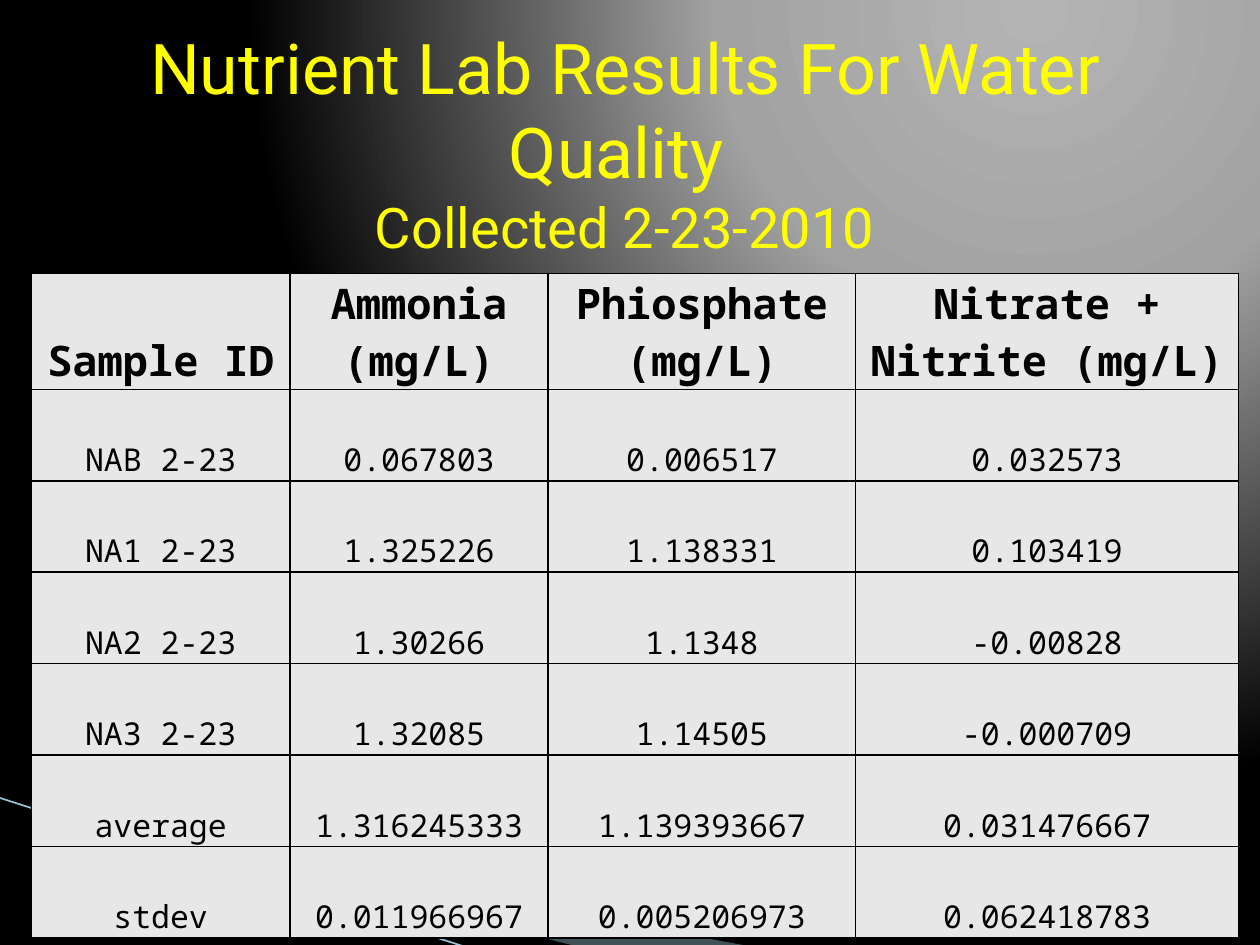
from dataclasses import dataclass

from lxml.etree import SubElement
from pptx import Presentation
from pptx.dml.color import RGBColor
from pptx.enum.shapes import MSO_CONNECTOR as Connector
from pptx.enum.text import MSO_ANCHOR as Anchor, MSO_AUTO_SIZE as AutoSize, PP_ALIGN as Align
from pptx.oxml import parse_xml
from pptx.oxml.ns import nsdecls, qn
from pptx.util import Emu, Inches, Pt

WIDTH, HEIGHT = Inches(10), Inches(7.5)
TITLE_FONT, TABLE_FONT = "Roboto", "Noto Sans Mono"
YELLOW, BLACK, CELL_GREY = "FFFF00", "000000", "E7E7E7"
GRADIENT_STOPS = [(0, "B4B4B4"), (40, "A2A2A2"), (100, BLACK)]
COLUMN_WIDTHS = [20.5, 20.5, 24.4, 30.4]
TABLE_HEIGHT = 67.73
ROWS = [
    ["Sample ID", "Ammonia (mg/L)", "Phiosphate (mg/L)", "Nitrate + Nitrite (mg/L)"],
    ["NAB 2-23", "0.067803", "0.006517", "0.032573"],
    ["NA1 2-23", "1.325226", "1.138331", "0.103419"],
    ["NA2 2-23", "1.30266", "1.1348", "-0.00828"],
    ["NA3 2-23", "1.32085", "1.14505", "-0.000709"],
    ["average", "1.316245333", "1.139393667", "0.031476667"],
    ["stdev", "0.011966967", "0.005206973", "0.062418783"],
]


@dataclass(frozen=True)
class Ribbon:
    """A decorative band, with its corners in grid columns and rows."""

    corners: list[tuple[float, float]]
    color: str
    opacity: int


RIBBONS = [
    Ribbon([(5.5, 86.8), (59.5, 100.13), (45.6, 100.13), (5.5, 86.67)], "A0CBDC", 40),
    Ribbon([(5.3, 86.53), (45.7, 100.13), (37.2, 100.27), (5.4, 86.67)], BLACK, 100),
]


def across(columns: float) -> Emu:
    """Convert columns of a hundred-column grid to a length."""
    return Emu(round(WIDTH * columns / 100))


def down(rows: float) -> Emu:
    """Convert rows of a hundred-row grid to a length."""
    return Emu(round(HEIGHT * rows / 100))


def rgb(value: str) -> RGBColor:
    """Turn a hex string into a colour."""
    return RGBColor.from_string(value)


def solid_xml(color: str) -> str:
    """Describe a solid fill."""
    return f'<a:solidFill><a:srgbClr val="{color}"/></a:solidFill>'


def paint_background(slide) -> None:
    """Fill the background with a circular gradient from the upper right."""
    slide.background.fill.solid()
    properties = slide.background._cSld.bg.bgPr
    stops = "".join(
        f'<a:gs pos="{position * 1000}"><a:srgbClr val="{color}"/></a:gs>'
        for position, color in GRADIENT_STOPS
    )
    gradient = parse_xml(
        f'<a:gradFill {nsdecls("a")} rotWithShape="1"><a:gsLst>{stops}</a:gsLst>'
        '<a:path path="circle"><a:fillToRect l="65000" t="0" r="0" b="98000"/>'
        "</a:path></a:gradFill>"
    )
    properties.replace(properties[0], gradient)


def draw_ribbon(slide, ribbon: Ribbon) -> None:
    """Draw one decorative band."""
    start, *others = [(across(x), down(y)) for x, y in ribbon.corners]
    builder = slide.shapes.build_freeform(*start)
    builder.add_line_segments(others, close=True)
    shape = builder.convert_to_shape()
    shape.shadow.inherit = False
    shape.fill.solid()
    shape.fill.fore_color.rgb = rgb(ribbon.color)
    shape.line.fill.background()
    color = shape._element.spPr.find(qn("a:solidFill"))[0]
    SubElement(color, qn("a:alpha"), val=str(ribbon.opacity * 1000))


def draw_accent_line(slide) -> None:
    """Draw the thin slanted line at the lower left."""
    line = slide.shapes.add_connector(
        Connector.STRAIGHT, across(-0.1), down(84.4), across(37.1), down(100.27)
    )
    line.line.color.rgb = rgb("97C5D8")
    line.line.width = Pt(0.95)
    SubElement(line._element.spPr, qn("a:effectLst"))


def add_run(paragraph, text: str, font: str, size: float, color: str, bold: bool = False):
    """Add a formatted run to a paragraph and return it."""
    run = paragraph.add_run()
    run.text = text
    run.font.name = font
    run.font.size = Pt(size)
    run.font.bold = bold
    run.font.color.rgb = rgb(color)
    return run


def add_title_run(paragraph, text: str, size: float) -> None:
    """Add a yellow outlined title run."""
    run = add_run(paragraph, text, TITLE_FONT, size, YELLOW)
    outline = parse_xml(f'<a:ln {nsdecls("a")} w="{Pt(0.75)}">{solid_xml(YELLOW)}</a:ln>')
    run.font._element.insert(0, outline)


def write_title(slide) -> None:
    """Place the title above the bands and write its two parts."""
    title = slide.shapes.title
    title._element.getparent().append(title._element)
    title.left, title.top = across(2.5), down(2.27)
    title.width, title.height = across(94.2), down(25.6)
    frame = title.text_frame
    frame.word_wrap = True
    frame.auto_size = AutoSize.NONE
    frame.vertical_anchor = Anchor.MIDDLE
    paragraph = frame.paragraphs[0]
    paragraph.alignment = Align.CENTER
    add_title_run(paragraph, "Nutrient Lab Results For Water Quality ", 40)
    paragraph.add_line_break()
    add_title_run(paragraph, "Collected 2-23-2010", 32)


def fill_cell(cell, text: str, header: bool) -> None:
    """Write and format one table cell."""
    cell.margin_left = cell.margin_right = cell.margin_top = Inches(0.01)
    cell.margin_bottom = 0
    cell.vertical_anchor = Anchor.BOTTOM
    cell.fill.solid()
    cell.fill.fore_color.rgb = rgb(CELL_GREY)
    for index, side in enumerate("LRTB"):
        border = parse_xml(
            f'<a:ln{side} {nsdecls("a")} w="{Pt(1)}">{solid_xml(BLACK)}</a:ln{side}>'
        )
        cell._tc.tcPr.insert(index, border)
    paragraph = cell.text_frame.paragraphs[0]
    paragraph.alignment = Align.CENTER
    add_run(paragraph, text, TABLE_FONT, 24 if header else 18, BLACK, header)


def draw_table(slide) -> None:
    """Draw the table of nutrient results."""
    table = slide.shapes.add_table(
        len(ROWS), len(COLUMN_WIDTHS), across(2.5), down(28.93),
        across(sum(COLUMN_WIDTHS)), down(TABLE_HEIGHT),
    ).table
    table.horz_banding = False
    for column, width in zip(table.columns, COLUMN_WIDTHS):
        column.width = across(width)
    for index, (row, texts) in enumerate(zip(table.rows, ROWS)):
        row.height = down(TABLE_HEIGHT / len(ROWS))
        for cell, text in zip(row.cells, texts):
            fill_cell(cell, text, header=index == 0)


def main() -> None:
    """Build and save the slide."""
    presentation = Presentation()
    presentation.slide_width, presentation.slide_height = WIDTH, HEIGHT
    slide = presentation.slides.add_slide(presentation.slide_layouts.get_by_name("Title Only"))
    paint_background(slide)
    for ribbon in RIBBONS:
        draw_ribbon(slide, ribbon)
    draw_accent_line(slide)
    write_title(slide)
    draw_table(slide)
    presentation.save("out.pptx")


if __name__ == "__main__":
    main()
